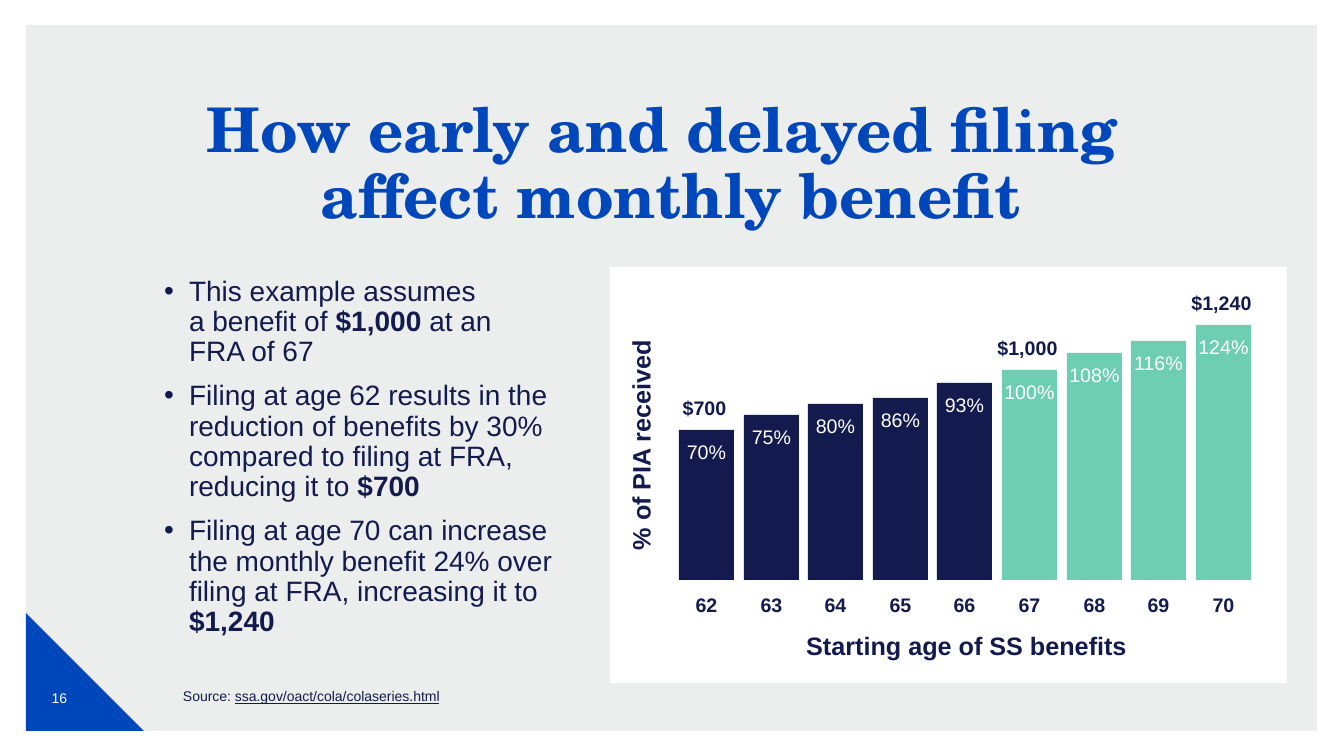
import lxml.etree
import pptx
import pptx.dml.color
import pptx.enum.shapes
import pptx.enum.text
import pptx.oxml.ns
import pptx.util

PX = 914400 / 100.8
NAVY, BLUE, GREEN, GRAY, WHITE = "131A4D", "0047BB", "6ECEB1", "D0D3D4", "FFFFFF"
SHAPE = pptx.enum.shapes.MSO_SHAPE
ALIGN = pptx.enum.text.PP_ALIGN
ANCHOR = pptx.enum.text.MSO_ANCHOR

BENEFITS = [
    (62, 70, 150, "$700"), (63, 75, 165, ""), (64, 80, 176, ""),
    (65, 86, 182, ""), (66, 93, 197, ""), (67, 100, 210, "$1,000"),
    (68, 108, 227, ""), (69, 116, 239, ""), (70, 124, 255, "$1,240"),
]
POINTS = [
    [("This example assumes \va benefit of ", False), ("$1,000 ", True),
     ("at an \vFRA of 67", False)],
    [("Filing at age 62 results in the reduction of benefits by 30% "
      "compared to filing at FRA, reducing it to ", False), ("$700", True)],
    [("Filing at age 70 can increase the monthly benefit 24% over "
      "filing at FRA, increasing it to ", False), ("$1,240", True)],
]


def px(length):
    """Turn pixels into EMU."""
    return pptx.util.Emu(round(length * PX))


def color(hex_string):
    """Return the colour of a hex string."""
    return pptx.dml.color.RGBColor.from_string(hex_string)


def add_block(slide, box, fill, preset=SHAPE.RECTANGLE):
    """Add a filled shape without outline or shadow."""
    block = slide.shapes.add_shape(preset, *map(px, box))
    block.shadow.inherit = False
    block.fill.solid()
    block.fill.fore_color.rgb = color(fill)
    block.line.fill.background()
    return block


def style(runs, size, fill, bold=False, face="Arial"):
    """Format runs alike."""
    for run in runs:
        run.font.name = face
        run.font.size = pptx.util.Pt(size)
        run.font.bold = bold
        run.font.color.rgb = color(fill)


def add_frame(slide, box, inset=(10, 5), anchor=ANCHOR.TOP):
    """Add a wrapping text box with the given insets."""
    holder = slide.shapes.add_textbox(*map(px, box))
    frame = holder.text_frame
    frame.word_wrap = True
    frame.margin_left = frame.margin_right = px(inset[0])
    frame.margin_top = frame.margin_bottom = px(inset[1])
    frame.vertical_anchor = anchor
    return holder


def add_label(slide, box, text, size, fill=NAVY, bold=False, face="Arial", **frame):
    """Add a centred text box in a single style."""
    label = add_frame(slide, box, **frame)
    paragraph = label.text_frame.paragraphs[0]
    paragraph.text = text
    paragraph.alignment = ALIGN.CENTER
    style(paragraph.runs, size, fill, bold, face)
    return label


def add_backdrop(slide, left, top, width, height):
    """Place the tinted page area, corner triangle and page number."""
    page = add_block(slide, (left, top, width, height), GRAY)
    tint = page.fill._xPr.find(".//" + pptx.oxml.ns.qn("a:srgbClr"))
    lxml.etree.SubElement(tint, pptx.oxml.ns.qn("a:alpha"), val="40000")
    corner = 118
    add_block(slide, (left, top + height - corner, corner, corner), BLUE, SHAPE.RIGHT_TRIANGLE)
    add_label(slide, (left + 6, top + height - 62, 55, 58), "16", 10, WHITE,
              anchor=ANCHOR.MIDDLE)


def add_title(slide, left, top, width, height):
    """Place the two-line title."""
    title = add_label(slide, (left, top, width, height),
                      "How early and delayed filing \vaffect monthly benefit",
                      44, BLUE, True, "TeX Gyre Schola", inset=(0, 5))
    title.text_frame.paragraphs[0].line_spacing = 0.9


def add_points(slide, left, top, width, height):
    """Place the bulleted explanation."""
    frame = add_frame(slide, (left, top, width, height), inset=(0, 5)).text_frame
    for index, pieces in enumerate(POINTS):
        paragraph = frame.add_paragraph() if index else frame.paragraphs[0]
        layout = paragraph._p.get_or_add_pPr()
        layout.set("marL", str(px(25)))
        layout.set("indent", str(px(-25)))
        lxml.etree.SubElement(layout, pptx.oxml.ns.qn("a:buFont"), typeface="Arial")
        lxml.etree.SubElement(layout, pptx.oxml.ns.qn("a:buChar"), char="•")
        paragraph.line_spacing = 0.9
        if index:
            paragraph.space_before = pptx.util.Pt(10)
        for text, bold in pieces:
            for number, line in enumerate(text.split("\v")):
                if number:
                    paragraph.add_line_break()
                run = paragraph.add_run()
                run.text = line
                style([run], 20, NAVY, bold)


def add_benefit_graph(slide, left, top, width, height):
    """Place the panel of benefit bars by starting age."""
    add_block(slide, (left, top, width, height), WHITE)
    bar_width, base = 55, top + 313
    first, span = left + 69, 517
    for index, (age, percent, bar_height, amount) in enumerate(BENEFITS):
        bar_left = first + round(index * span / (len(BENEFITS) - 1))
        bar_top = base - bar_height
        add_block(slide, (bar_left, bar_top, bar_width, bar_height),
                  NAVY if age < 67 else GREEN)
        add_label(slide, (bar_left, bar_top + 9, bar_width, 24), f"{percent}%", 14, WHITE,
                  inset=(0, 0), anchor=ANCHOR.BOTTOM)
        add_label(slide, (bar_left, base + 8, bar_width, 34), str(age), 14, bold=True)
        if amount:
            add_label(slide, (bar_left - 20, bar_top - 39, 91, 34), amount, 14, bold=True)
    add_label(slide, (first + 1, top + 358, 573, 40), "Starting age of SS benefits", 18,
              bold=True)
    received = add_label(slide, (left - 126, top + 158, 313, 40), "% of PIA received", 18,
                         bold=True)
    received.rotation = 270


def add_source(slide, left, top, width, height):
    """Place the source line with its underlined address."""
    paragraph = add_frame(slide, (left, top, width, height)).text_frame.paragraphs[0]
    paragraph.text = "Source: "
    address = paragraph.add_run()
    address.text = "ssa.gov/oact/cola/colaseries.html"
    style(paragraph.runs, 10, NAVY)
    address.font.underline = True


def main():
    """Build and save the slide."""
    deck = pptx.Presentation()
    deck.slide_width, deck.slide_height = px(1344), px(756)
    slide = deck.slides.add_slide(deck.slide_layouts[6])
    add_backdrop(slide, 26, 25, 1291, 706)
    add_title(slide, 164, 94, 1014, 148)
    add_points(slide, 164, 272, 390, 415)
    add_benefit_graph(slide, 610, 267, 677, 416)
    add_source(slide, 173, 683, 1092, 27)
    deck.save("out.pptx")


if __name__ == "__main__":
    main()
